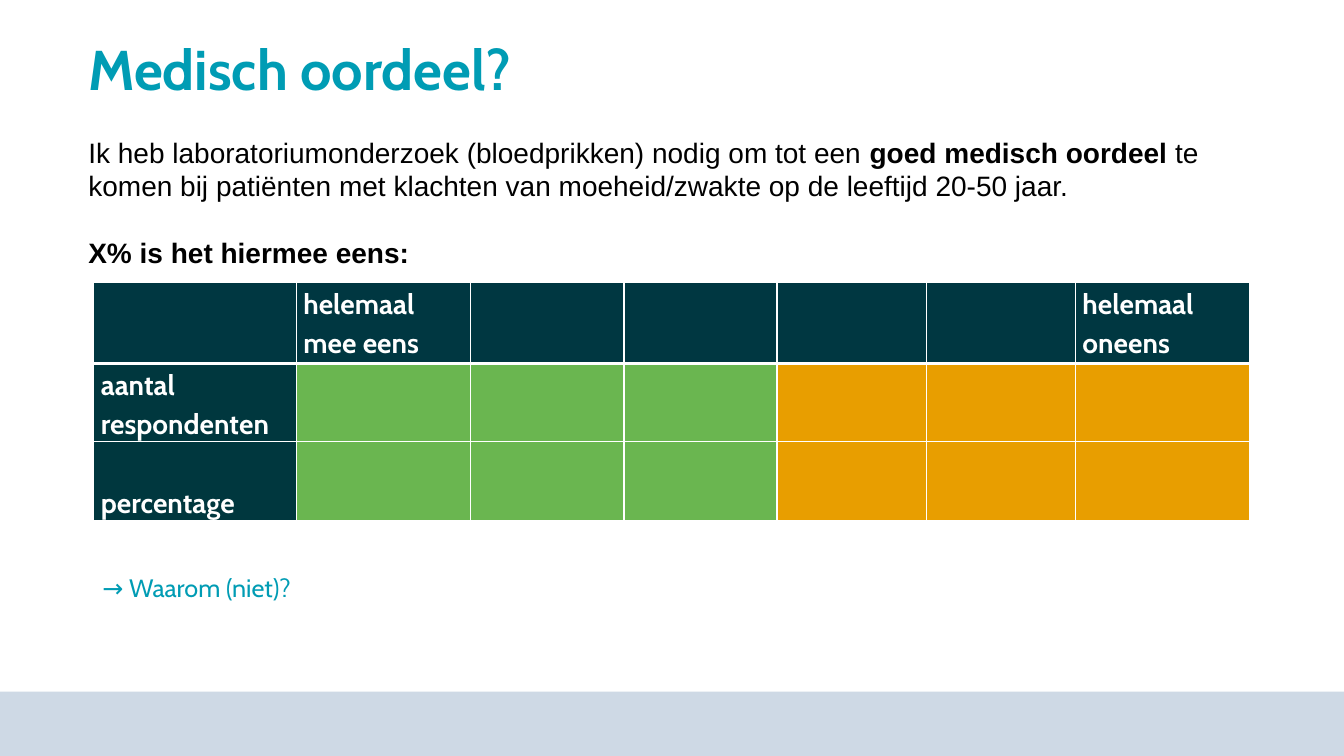
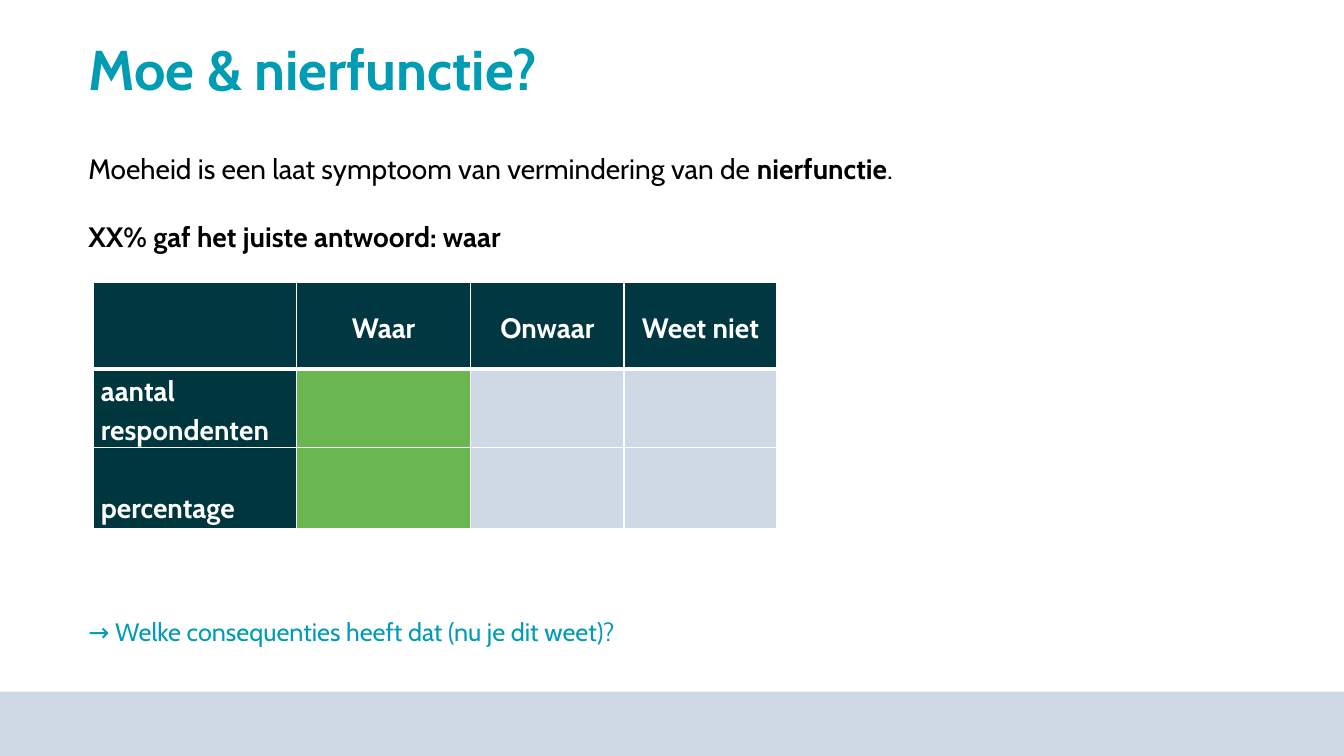
from pptx import Presentation
from pptx.dml.color import RGBColor
from pptx.enum.shapes import MSO_SHAPE
from pptx.enum.text import MSO_ANCHOR, PP_ALIGN
from pptx.oxml import parse_xml
from pptx.oxml.ns import nsdecls
from pptx.util import Pt

# Content: body paragraphs are lists of (text, bold) runs
ROW_LABELS = [["aantal", "respondenten"], ["percentage"]]
SLIDES = [
    {
        "title": "Medisch oordeel?",
        "font": "Arial", "body_top": 93,
        "body": [
            [("Ik heb laboratoriumonderzoek (bloedprikken) nodig om tot een ", False),
             ("goed medisch oordeel ", True),
             ("te komen bij patiënten met klachten van moeheid/zwakte "
              "op de leeftijd 20-50 jaar.", False)],
            [("X% is het hiermee eens:", True)],
        ],
        "header": ["", "helemaal mee eens", "", "", "", "", "helemaal oneens"],
        "header_style": (PP_ALIGN.LEFT, MSO_ANCHOR.TOP),
        "answers": ["green"] * 3 + ["orange"] * 3,
        "cols": [144.7, 124.6, 109.4, 109.4, 106.6, 106.6, 124.6],
        "rows": [58, 56, 56],
        "question": "→ Waarom (niet)?", "question_at": (66, 405),
    },
    {
        "title": "Moe & nierfunctie?",
        "font": "Cabin", "body_top": 105,
        "body": [
            [("Moeheid is een laat symptoom van vermindering van de ", False),
             ("nierfunctie", True), (".", False)],
            [("XX% gaf het juiste antwoord: waar", True)],
        ],
        "header": ["", "Waar", "Onwaar", "Weet niet"],
        "header_style": (PP_ALIGN.CENTER, MSO_ANCHOR.MIDDLE),
        "answers": ["green", "pale", "pale"],
        "cols": [144.7, 124.6, 109.4, 109.4],
        "rows": [62, 56, 58],
        "question": "→ Welke consequenties heeft dat (nu je dit weet)?",
        "question_at": (56, 437),
    },
]

# Shared style
COLORS = {"teal": "009CB4", "header": "003741", "label": "00373E", "green": "6AB650",
          "orange": "E89E00", "pale": "CED9E5", "black": "000000", "white": "FFFFFF"}
FONT = "Cabin"
WIDTH, HEIGHT, BAND_TOP = 960, 540, 494
LEFT, TABLE_LEFT, TABLE_TOP = 56, 67, 201.6
LABEL_HEIGHT = 56  # two lines of cell text


def rgb(name):
    return RGBColor.from_string(COLORS[name])


def add_run(p, text, size, color, bold=False, font=FONT):
    r = p.add_run()
    r.text = text
    r.font.size, r.font.bold, r.font.name = Pt(size), bold, font
    r.font.color.rgb = rgb(color)


def add_box(s, x, y, w, h):
    tf = s.shapes.add_textbox(Pt(x), Pt(y), Pt(w), Pt(h)).text_frame
    tf.word_wrap = True
    return tf


def add_frame(s, title):
    """Footer band and title."""
    band = s.shapes.add_shape(MSO_SHAPE.RECTANGLE, 0, Pt(BAND_TOP),
                              Pt(WIDTH), Pt(HEIGHT - BAND_TOP))
    band.shadow.inherit = False
    band.fill.solid()
    band.fill.fore_color.rgb = rgb("pale")
    band.line.fill.background()
    tf = add_box(s, LEFT, 26, 769, 51)
    tf.vertical_anchor = MSO_ANCHOR.MIDDLE
    p = tf.paragraphs[0]
    p.line_spacing = 0.9
    add_run(p, title, 40, "teal", True)


def add_body(s, data):
    tf = add_box(s, LEFT, data["body_top"], 836, 100)
    for i, runs in enumerate(data["body"]):
        p = tf.add_paragraph() if i else tf.paragraphs[0]
        p.line_spacing = Pt(24)
        if i:
            p.space_before = Pt(24)
        for text, bold in runs:
            add_run(p, text, 20, "black", bold, data["font"])


def style_cell(cell, fill, row):
    """White borders, heavier under the header row, and a plain fill."""
    widths = {"L": 1, "R": 1, "T": 3 if row == 1 else 1, "B": 3 if row == 0 else 1}
    tc_pr = cell._tc.get_or_add_tcPr()
    for side, width in widths.items():
        tc_pr.append(parse_xml(
            f'<a:ln{side} {nsdecls("a")} w="{Pt(width)}"><a:solidFill>'
            f'<a:srgbClr val="{COLORS["white"]}"/></a:solidFill></a:ln{side}>'))
    cell.fill.solid()
    cell.fill.fore_color.rgb = rgb(fill)
    cell.margin_left = cell.margin_right = Pt(5)
    cell.margin_top = cell.margin_bottom = 0


def fill_cell(cell, lines, align, anchor):
    cell.vertical_anchor = anchor
    tf = cell.text_frame
    for i, line in enumerate(lines):
        p = tf.add_paragraph() if i else tf.paragraphs[0]
        p.alignment, p.line_spacing = align, 1.15
        add_run(p, line, 20, "white", True)


def add_answers(s, data):
    cols, rows = data["cols"], data["rows"]
    table = s.shapes.add_table(len(rows), len(cols), Pt(TABLE_LEFT), Pt(TABLE_TOP),
                               Pt(sum(cols)), Pt(sum(rows))).table
    table.horz_banding = False
    for column, width in zip(table.columns, cols):
        column.width = Pt(width)
    for i, height in enumerate(rows):
        table.rows[i].height = Pt(height)
        fills = ["label"] + data["answers"] if i else ["header"] * len(cols)
        for j, fill in enumerate(fills):
            style_cell(table.cell(i, j), fill, i)
    for j, text in enumerate(data["header"]):
        if text:
            fill_cell(table.cell(0, j), [text], *data["header_style"])
    for i, lines in enumerate(ROW_LABELS, 1):
        cell = table.cell(i, 0)
        fill_cell(cell, lines, PP_ALIGN.LEFT, MSO_ANCHOR.BOTTOM)
        cell.margin_bottom = Pt(rows[i] - LABEL_HEIGHT)


def main():
    prs = Presentation()
    prs.slide_width, prs.slide_height = Pt(WIDTH), Pt(HEIGHT)
    for data in SLIDES:
        s = prs.slides.add_slide(prs.slide_layouts[6])
        add_frame(s, data["title"])
        add_answers(s, data)
        add_body(s, data)
        tf = add_box(s, *data["question_at"], 700, 29)
        add_run(tf.paragraphs[0], data["question"], 18, "teal")
    prs.save("out.pptx")


if __name__ == "__main__":
    main()
